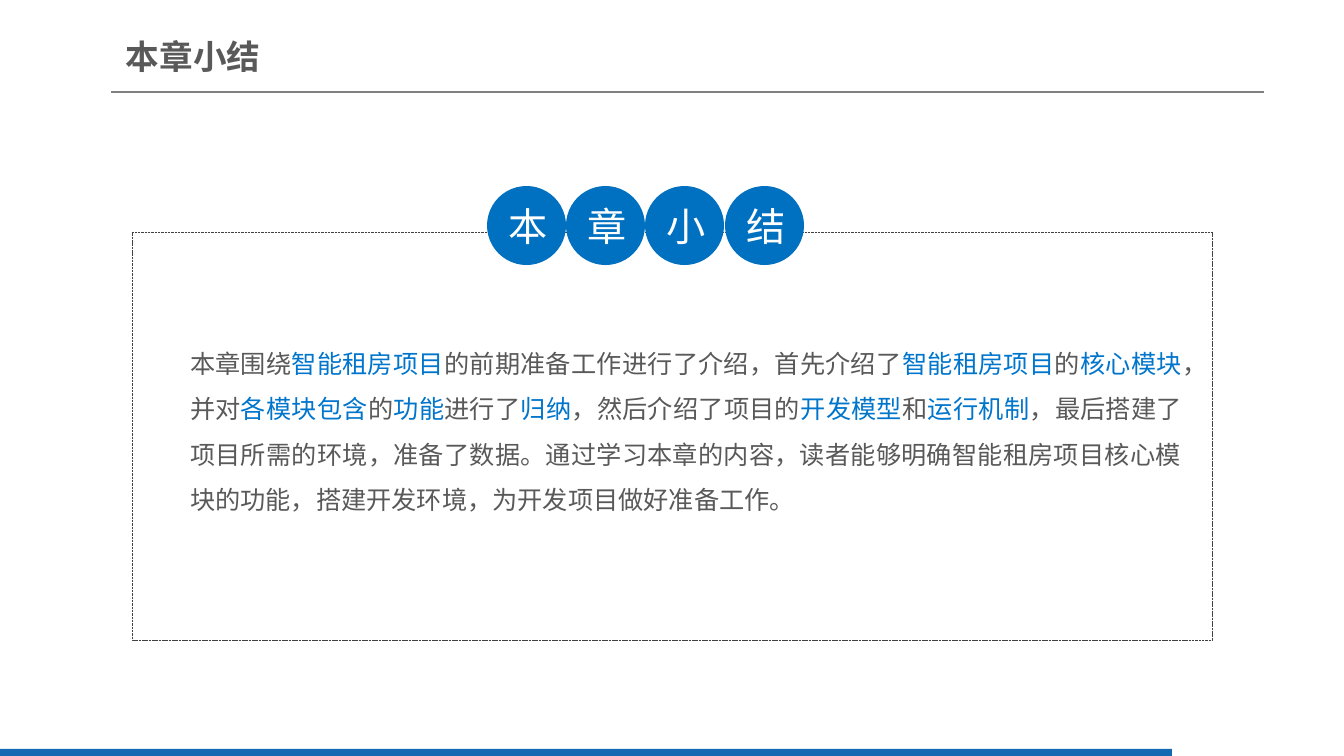
from lxml import etree
from pptx import Presentation, util as u
from pptx.dml.color import RGBColor
from pptx.enum import dml, shapes, text
from pptx.oxml.ns import qn

GREY = RGBColor(0x59, 0x59, 0x59)
RULE = RGBColor(0x80, 0x80, 0x80)
FRAME = RGBColor(0x40, 0x40, 0x40)
BAR = RGBColor(0x13, 0x69, 0xB2)
CIRCLE = RGBColor(0x00, 0x70, 0xC0)
ACCENT = RGBColor(0x00, 0x75, 0xCC)
WHITE = RGBColor(0xFF, 0xFF, 0xFF)

SUMMARY = (
    "本章围绕|智能租房项目|的前期准备工作进行了介绍，首先介绍了|智能租房项目|的|核心模块|，"
    "并对|各模块包含|的|功能|进行了|归纳|，然后介绍了项目的|开发模型|和|运行机制|，最后搭建了"
    "项目所需的环境，准备了数据。通过学习本章的内容，读者能够明确智能租房项目核心模"
    "块的功能，搭建开发环境，为开发项目做好准备工作。"
)


def px(n):
    return u.Emu(round(n * 12192000 / 1344))


class SlideBuilder:
    """Draws styled elements on one slide, with lengths in px."""

    font = "Noto Sans CJK SC"

    def __init__(self, slide):
        self.s = slide

    def label(self, sp, content, size, color, bold=False, align=None, spacing=None):
        p = sp.text_frame.paragraphs[0]
        p.alignment = align
        p.line_spacing = spacing
        f = p.font
        f.size, f.bold, f.name = u.Pt(size), bold, self.font
        f.color.rgb = color
        etree.SubElement(p._p.pPr.find(qn("a:defRPr")), qn("a:ea"), typeface=self.font)
        for i, part in enumerate(content.split("|")):
            r = p.add_run()
            r.text = part
            if i % 2:
                r.font.color.rgb = ACCENT

    def shape(self, kind, x, y, w, h, fill=None):
        sp = self.s.shapes.add_shape(kind, px(x), px(y), px(w), px(h))
        sp.shadow.inherit = False
        sp.line.fill.background()
        if fill is None:
            sp.fill.background()
        else:
            sp.fill.solid()
            sp.fill.fore_color.rgb = fill
        return sp

    def frame(self, x, y, w, h):
        sp = self.shape(shapes.MSO_SHAPE.ROUNDED_RECTANGLE, x, y, w, h)
        sp.adjustments[0] = 0
        sp.line.color.rgb = FRAME
        sp.line.width = u.Pt(0.25)
        sp.line.dash_style = dml.MSO_LINE.SQUARE_DOT

    def circle(self, x, y, d, char):
        sp = self.shape(shapes.MSO_SHAPE.OVAL, x, y, d, d, CIRCLE)
        sp.text_frame.vertical_anchor = text.MSO_ANCHOR.MIDDLE
        self.label(sp, char, 28, WHITE, align=text.PP_ALIGN.CENTER)

    def rule(self, x1, x2, y):
        line = self.s.shapes.add_connector(
            shapes.MSO_CONNECTOR.STRAIGHT, px(x1), px(y), px(x2), px(y))
        line.line.color.rgb = RULE
        line.line.width = u.Pt(0.75)
        etree.SubElement(line._element.spPr, qn("a:effectLst"))

    def textbox(self, x, y, w, h, content, size, anchor=text.MSO_ANCHOR.TOP, **style):
        sp = self.s.shapes.add_textbox(px(x), px(y), px(w), px(h))
        tf = sp.text_frame
        tf.word_wrap = True
        tf.vertical_anchor = anchor
        tf.margin_left = tf.margin_right = tf.margin_top = tf.margin_bottom = 0
        self.label(sp, content, size, GREY, **style)


def main():
    prs = Presentation()
    prs.slide_width, prs.slide_height = px(1344), px(756)
    b = SlideBuilder(prs.slides.add_slide(prs.slide_layouts[6]))
    b.rule(111, 1264, 92)
    b.shape(shapes.MSO_SHAPE.RECTANGLE, 0, 749, 1172, 7, BAR)
    b.textbox(126, 29, 625, 55, "本章小结", 24, text.MSO_ANCHOR.MIDDLE, bold=True)
    b.frame(132, 232, 1080, 408)
    b.textbox(190, 333, 992, 183, SUMMARY, 18,
              align=text.PP_ALIGN.JUSTIFY, spacing=1.5)
    for i, char in enumerate("本章小结"):
        b.circle(487 + round(i * 79.25), 186, 79, char)
    prs.save("out.pptx")


if __name__ == "__main__":
    main()
